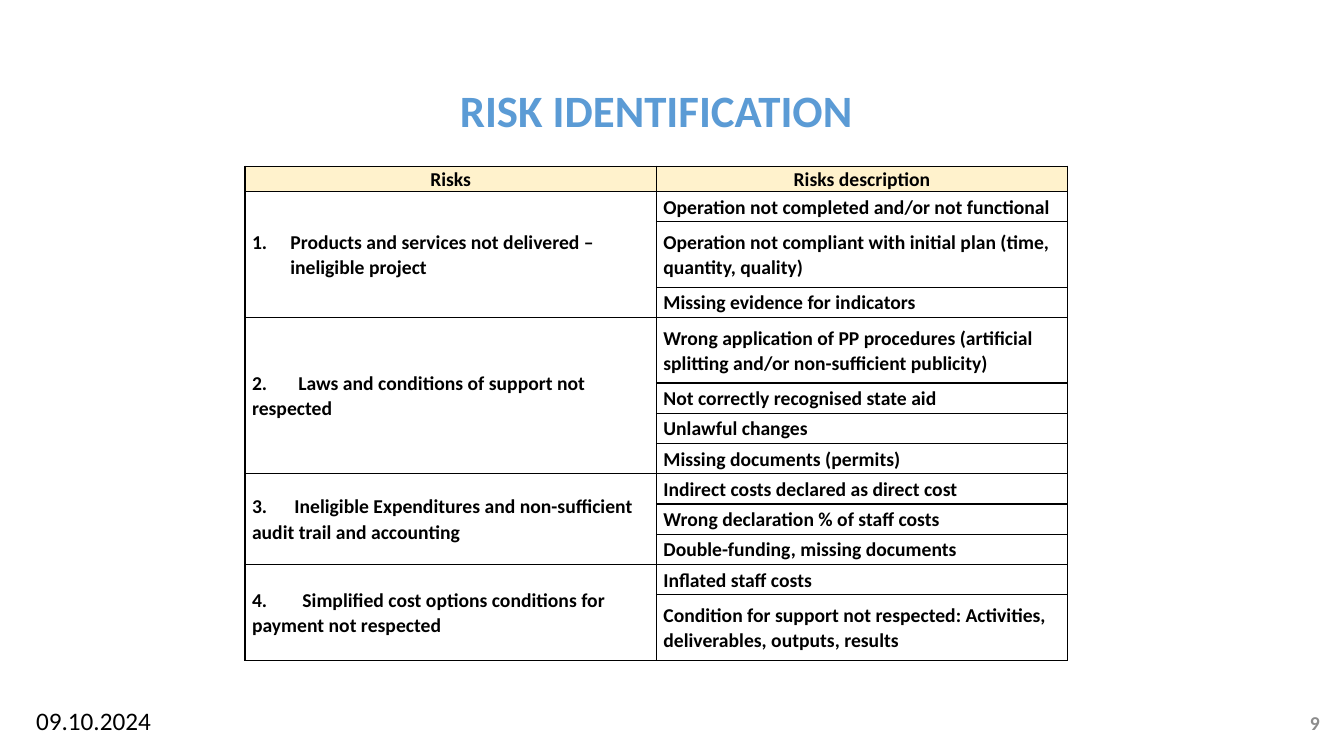
from dataclasses import dataclass

from lxml import etree
from pptx import Presentation
from pptx.dml.color import RGBColor
from pptx.enum import text as t
from pptx.oxml import ns
from pptx.util import Inches, Pt


@dataclass(frozen=True)
class Theme:
    font: str = "Calibri"
    ink: str = "000000"
    blue: str = "5B9BD5"
    grey: str = "8C8C8C"
    cream: str = "FFF2CC"
    title: int = 32
    date: int = 18
    body: int = 14


THEME = Theme()
LEFT, MID, RIGHT = t.PP_ALIGN.LEFT, t.PP_ALIGN.CENTER, t.PP_ALIGN.RIGHT
HEADS = ["Risks", "Risks description"]
RISKS = [
    ("Products and services not delivered – ineligible project", None, [
        "Operation not completed and/or not functional",
        "Operation not compliant with initial plan (time, quantity, quality)",
        "Missing evidence for indicators",
    ]),
    ("2.\tLaws and conditions of support not respected", 0.46, [
        "Wrong application of PP procedures (artificial splitting "
        "and/or non-sufficient publicity)",
        "Not correctly recognised state aid",
        "Unlawful changes",
        "Missing documents (permits)",
    ]),
    ("3.\tIneligible Expenditures and non-sufficient audit trail and accounting",
     0.42, [
         "Indirect costs declared as direct cost",
         "Wrong declaration % of staff costs",
         "Double-funding, missing documents",
     ]),
    ("4.\tSimplified cost options conditions for payment not respected", 0.5, [
        "Inflated staff costs",
        "Condition for support not respected: Activities, deliverables, "
        "outputs, results",
    ]),
]
HEAD, ROW, TALL = 0.25, 0.3, 0.65
WRAP = 50


def apply(item, form):
    for key, value in form.items():
        setattr(item, key, value)


def node(parent, tag, **attrs):
    return etree.SubElement(parent, ns.qn(tag), **attrs)


def write(frame, words, size, color, bold=True, **form):
    para = frame.paragraphs[0]
    apply(para, form)
    run = para.add_run()
    run.text = words
    apply(run.font, {"name": THEME.font, "size": Pt(size), "bold": bold})
    run.font.color.rgb = RGBColor.from_string(color)


def place(shape, left, top, width, height):
    apply(shape, {"left": Inches(left), "top": Inches(top),
                  "width": Inches(width), "height": Inches(height)})


def label(slide, box, words, size, color, anchor, **form):
    shape = slide.shapes.add_textbox(*map(Inches, box))
    apply(shape.text_frame, {"word_wrap": True, "vertical_anchor": anchor})
    write(shape.text_frame, words, size, color, **form)


def border(cell):
    props = cell._tc.get_or_add_tcPr()
    for place_no, side in enumerate("LRTB"):
        line = etree.Element(ns.qn(f"a:ln{side}"), w=str(Pt(1)))
        fill = node(line, "a:solidFill")
        node(fill, "a:srgbClr", val=THEME.ink)
        props.insert(place_no, line)


def number(para):
    props = para._p.get_or_add_pPr()
    props.set("marL", str(Inches(0.38)))
    props.set("indent", str(-Inches(0.38)))
    node(props, "a:buFont", typeface="+mj-lt")
    node(props, "a:buAutoNum", type="arabicPeriod")


def tab(para, stop):
    tabs = node(para._p.get_or_add_pPr(), "a:tabLst")
    node(tabs, "a:tab", pos=str(Inches(stop)), algn="l")


def enter(cell, words, align=LEFT, after=8):
    write(cell.text_frame, words, THEME.body, THEME.ink, alignment=align,
          line_spacing=1.07, space_after=Pt(after))


def style(cell, head):
    apply(cell, {"margin_left": Inches(0.07), "margin_right": Inches(0.07),
                 "margin_top": 0, "margin_bottom": 0,
                 "vertical_anchor": t.MSO_ANCHOR.MIDDLE})
    if head:
        cell.fill.solid()
        cell.fill.fore_color.rgb = RGBColor.from_string(THEME.cream)
    else:
        cell.fill.background()
    border(cell)


def grid(slide):
    notes = [note for _, _, group in RISKS for note in group]
    sizes = [HEAD] + [TALL if len(note) > WRAP else ROW for note in notes]
    box = map(Inches, (2.43, 1.65, 8.16, sum(sizes)))
    table = slide.shapes.add_table(len(sizes), len(HEADS), *box).table
    apply(table, {"first_row": False, "horz_banding": False})
    for row, size in zip(table.rows, sizes):
        row.height = Inches(size)
        for cell in row.cells:
            style(cell, row is table.rows[0] or size == HEAD)
    for col, head in enumerate(HEADS):
        enter(table.cell(0, col), head, MID, 6)
    top = 1
    for risk, stop, group in RISKS:
        cell = table.cell(top, 0)
        cell.merge(table.cell(top + len(group) - 1, 0))
        para = cell.text_frame.paragraphs[0]
        if stop:
            tab(para, stop)
        else:
            number(para)
        enter(cell, risk, after=8 if stop else 0)
        for row, note in enumerate(group, top):
            enter(table.cell(row, 1), note)
        top += len(group)


def heading(slide):
    title = slide.shapes.title
    place(title, 0.76, 0.83, 11.5, 1.13)
    apply(title.text_frame, {"word_wrap": True,
                             "vertical_anchor": t.MSO_ANCHOR.TOP,
                             "auto_size": t.MSO_AUTO_SIZE.NONE})
    write(title.text_frame, "RISK IDENTIFICATION", THEME.title, THEME.blue,
          alignment=MID, line_spacing=0.9)


def main():
    deck = Presentation()
    apply(deck, {"slide_width": Inches(13.33), "slide_height": Inches(7.5)})
    slide = deck.slides.add_slide(deck.slide_layouts[5])
    label(slide, (12.66, 6.98, 0.53, 0.38), "9", THEME.body, THEME.grey,
          t.MSO_ANCHOR.MIDDLE, alignment=RIGHT)
    label(slide, (0.26, 6.95, 1.84, 0.4), "09.10.2024", THEME.date, THEME.ink,
          t.MSO_ANCHOR.TOP, bold=False)
    heading(slide)
    grid(slide)
    deck.save("out.pptx")


if __name__ == "__main__":
    main()
